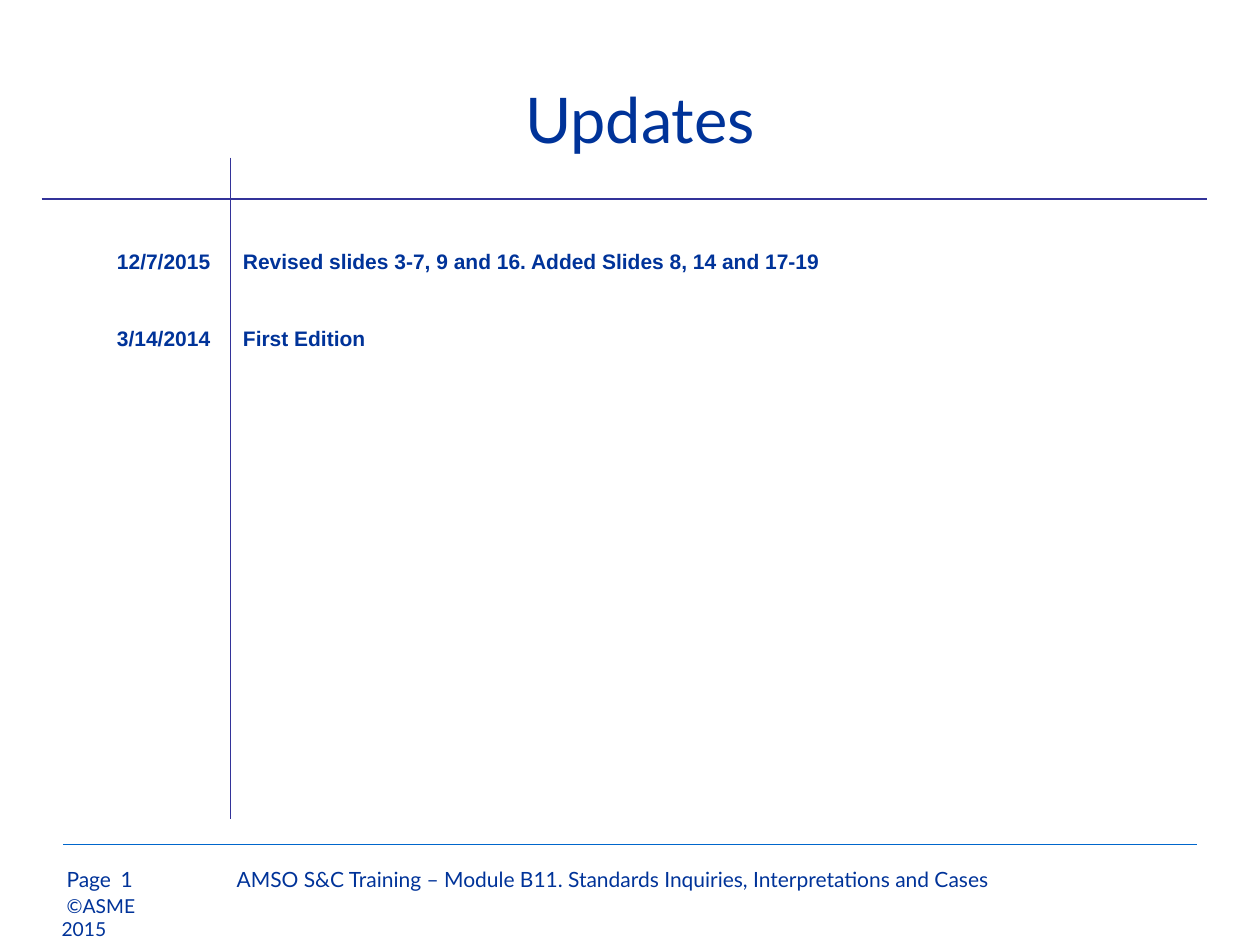
from lxml.etree import SubElement
from pptx import Presentation
from pptx.dml.color import RGBColor
from pptx.enum.shapes import MSO_CONNECTOR
from pptx.enum.text import MSO_ANCHOR, PP_ALIGN
from pptx.oxml.ns import qn
from pptx.util import Inches, Pt

NAVY = RGBColor(0x00, 0x33, 0x99)
INDIGO = RGBColor(0x33, 0x33, 0x99)
BLUE = RGBColor(0x00, 0x66, 0xCC)

UPDATES = [
    ("12/7/2015", "Revised slides 3-7, 9 and 16. Added Slides 8, 14 and 17-19"),
    ("3/14/2014", "First Edition"),
]
UPDATES_AREA = (0.83, 1.92, 8.58, 5.1)
ENTRY_GAP = Pt(30)

# text, (left, top, width, height), size, alignment, anchor, first-line indent
LABELS = [
    ("Updates", (0.58, 0.5, 9, 0.88), 36, PP_ALIGN.CENTER, MSO_ANCHOR.MIDDLE, 0),
    ("Page", (0.43, 6.83, 2.33, 0.52), 12, PP_ALIGN.LEFT, MSO_ANCHOR.TOP, 0),
    ("1", (0.86, 6.83, 0.47, 0.52), 12, PP_ALIGN.LEFT, MSO_ANCHOR.TOP, 0),
    ("AMSO S&C Training – Module B11. Standards Inquiries, Interpretations and Cases",
     (1.53, 6.83, 6.67, 0.52), 12, PP_ALIGN.CENTER, MSO_ANCHOR.TOP, 0),
    ("©ASME 2015", (0.39, 7.05, 1, 0.29), 11, PP_ALIGN.LEFT, MSO_ANCHOR.TOP, 0.04),
]

# start, end, colour, width in points
RULES = [
    ((0.5, 6.7), (9.5, 6.7), BLUE, 0.75),
    ((1.83, 1.25), (1.83, 6.5), INDIGO, 1),
    ((0.33, 1.58), (9.58, 1.58), INDIGO, 1),
]


def add_box(page, area, anchor=MSO_ANCHOR.TOP):
    frame = page.shapes.add_textbox(*map(Inches, area)).text_frame
    frame.word_wrap = True
    frame.vertical_anchor = anchor
    return frame


def write(para, text, size, font, bold=False):
    para.text = text
    for span in para.runs:
        span.font.name = font
        span.font.size = Pt(size)
        span.font.bold = bold
        span.font.color.rgb = NAVY


def set_indent(para, margin, first_line):
    properties = para._p.get_or_add_pPr()
    properties.set("marL", str(Inches(margin)))
    properties.set("indent", str(Inches(first_line)))


def add_rule(page, start, end, color, width):
    rule = page.shapes.add_connector(
        MSO_CONNECTOR.STRAIGHT, *map(Inches, start + end))
    rule.line.color.rgb = color
    rule.line.width = Pt(width)
    SubElement(rule._element.spPr, qn("a:effectLst"))


def add_updates(page):
    frame = add_box(page, UPDATES_AREA)
    for index, entry in enumerate(UPDATES):
        para = frame.add_paragraph() if index else frame.paragraphs[0]
        set_indent(para, 1, -1)
        if index:
            para.space_before = ENTRY_GAP
        write(para, "\t".join(entry), 12, "Arial", bold=True)


def main():
    deck = Presentation()
    deck.slide_width, deck.slide_height = Inches(10), Inches(7.5)
    page = deck.slides.add_slide(deck.slide_layouts[6])
    for text, area, size, alignment, anchor, first_line in LABELS:
        para = add_box(page, area, anchor).paragraphs[0]
        para.alignment = alignment
        set_indent(para, 0, first_line)
        write(para, text, size, "Lato")
    for rule in RULES:
        add_rule(page, *rule)
    add_updates(page)
    deck.save("out.pptx")


if __name__ == "__main__":
    main()
